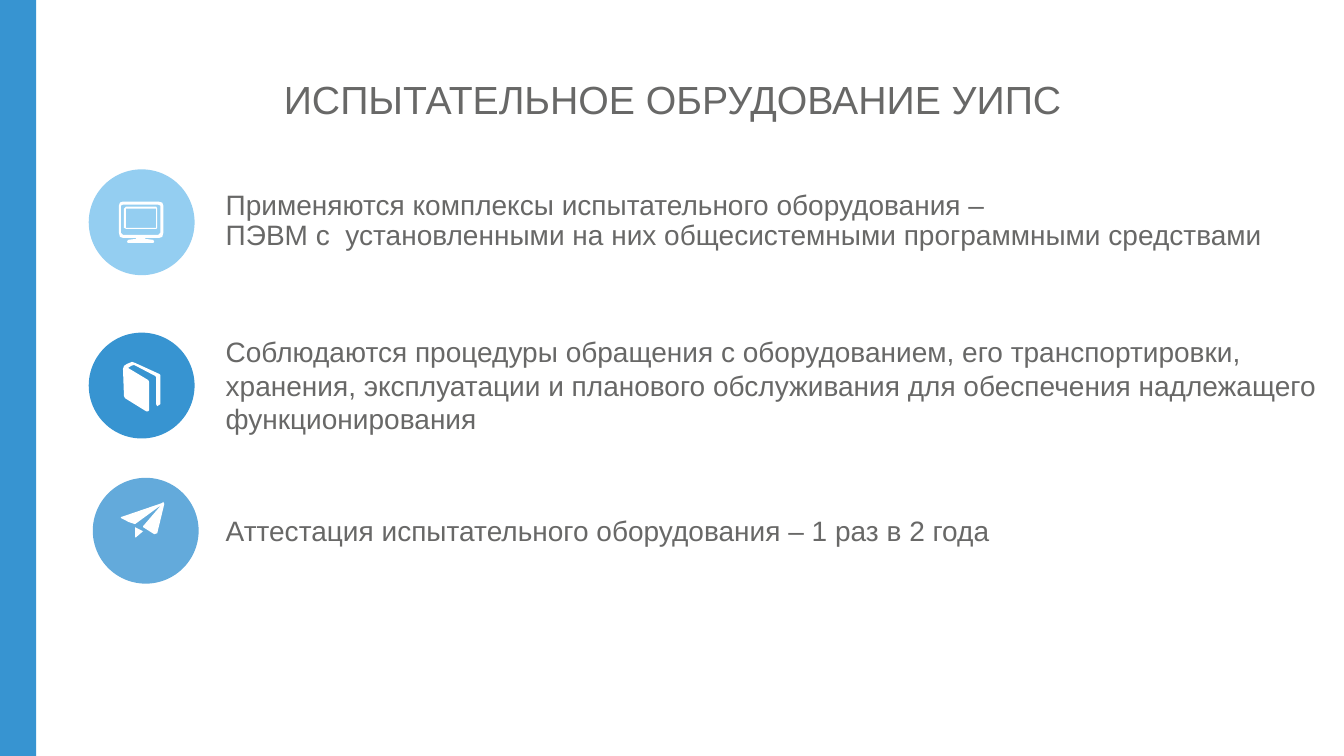
import pptx
import pptx.dml.color
import pptx.enum.shapes
import pptx.enum.text
import pptx.util
from pptx.util import Inches

SHAPES = pptx.enum.shapes.MSO_SHAPE
ALIGN = pptx.enum.text.PP_ALIGN
ANCHOR = pptx.enum.text.MSO_ANCHOR
BLUE, WHITE, GREY = "3794D1", "FFFFFF", "686867"

presentation = pptx.Presentation()
presentation.slide_width = Inches(13.33)
presentation.slide_height = Inches(7.5)
slide = presentation.slides.add_slide(presentation.slide_layouts[6])


def paint(shape, color):
    """Give the shape a plain fill with no outline or shadow."""
    shape.shadow.inherit = False
    shape.fill.solid()
    shape.fill.fore_color.rgb = pptx.dml.color.RGBColor.from_string(color)
    shape.line.fill.background()


def add_text(lines, left, top, width, height, size=20, spacing=None,
             align=ALIGN.LEFT, anchor=ANCHOR.TOP):
    box = slide.shapes.add_textbox(Inches(left), Inches(top), Inches(width), Inches(height))
    frame = box.text_frame
    frame.word_wrap = True
    frame.vertical_anchor = anchor
    frame.text = "\n".join(lines)
    for paragraph in frame.paragraphs:
        paragraph.alignment = align
        paragraph.line_spacing = spacing
        paragraph.font.name = "Arial"
        paragraph.font.size = pptx.util.Pt(size)
        paragraph.font.color.rgb = pptx.dml.color.RGBColor.from_string(GREY)


side_bar = slide.shapes.add_shape(SHAPES.RECTANGLE, 0, 0, Inches(0.36), Inches(7.5))
paint(side_bar, BLUE)

add_text(["ИСПЫТАТЕЛЬНОЕ ОБРУДОВАНИЕ УИПС"], 0.92, 0.58, 11.5, 0.85,
         size=28, spacing=0.9, align=ALIGN.CENTER, anchor=ANCHOR.MIDDLE)
add_text(["Применяются комплексы испытательного оборудования –",
          "ПЭВМ с  установленными на них общесистемными программными средствами"],
         2.14, 1.85, 10.61, 0.77, spacing=0.9)
add_text(["Соблюдаются процедуры обращения с оборудованием, его транспортировки,",
          "хранения, эксплуатации и планового обслуживания для обеспечения "
          "надлежащего функционирования"],
         2.14, 3.27, 11.1, 1.11)
add_text(["Аттестация испытательного оборудования – 1 раз в 2 года"], 2.14, 5.05, 7.96, 0.44)

for left, top, color in [(0.88, 1.68, "94CEF1"), (0.88, 3.3, BLUE), (0.92, 4.74, "63AADB")]:
    circle = slide.shapes.add_shape(
        SHAPES.OVAL, Inches(left), Inches(top), Inches(1.05), Inches(1.05))
    paint(circle, color)

# Each icon part is a list of outlines; an outline inside another cuts a hole.
monitor_frame = [
    [(1.22, 2), (1.57, 2), (1.61, 2.01), (1.62, 2.04), (1.62, 2.31), (1.61, 2.35),
     (1.58, 2.36), (1.44, 2.36), (1.44, 2.37), (1.52, 2.38), (1.53, 2.4), (1.52, 2.41),
     (1.27, 2.41), (1.26, 2.4), (1.27, 2.38), (1.35, 2.37), (1.35, 2.36), (1.22, 2.36),
     (1.19, 2.35), (1.18, 2.31), (1.18, 2.04), (1.19, 2.01)],
    [(1.22, 2.03), (1.2, 2.04), (1.2, 2.31), (1.22, 2.33),
     (1.57, 2.33), (1.59, 2.31), (1.59, 2.04), (1.57, 2.03)],
]
monitor_screen = [
    [(1.25, 2.05), (1.55, 2.05), (1.56, 2.07), (1.56, 2.26), (1.55, 2.27),
     (1.25, 2.27), (1.23, 2.26), (1.23, 2.07)],
    [(1.25, 2.07), (1.25, 2.26), (1.55, 2.26), (1.55, 2.07)],
]
book = [
    [(1.58, 3.71), (1.34, 3.6), (1.31, 3.59), (1.26, 3.61), (1.23, 3.63), (1.22, 3.66),
     (1.23, 3.93), (1.24, 3.95), (1.45, 4.08), (1.47, 4.08), (1.48, 4.07), (1.48, 3.79),
     (1.47, 3.77), (1.27, 3.65), (1.3, 3.63), (1.33, 3.62), (1.54, 3.73), (1.55, 3.74),
     (1.55, 4.01), (1.56, 4.03), (1.59, 4.01), (1.59, 3.72)],
]
paper_plane = [
    [(1.61, 4.99), (1.2, 5.13), (1.2, 5.14), (1.28, 5.18), (1.34, 5.2), (1.6, 5.01),
     (1.42, 5.22), (1.42, 5.23), (1.53, 5.3), (1.56, 5.29), (1.63, 5), (1.62, 4.98)],
    [(1.34, 5.33), (1.35, 5.33), (1.42, 5.27), (1.34, 5.23)],
]

for outlines in [monitor_frame, monitor_screen, book, paper_plane]:
    builder = None
    for outline in outlines:
        start, *rest = [(Inches(x), Inches(y)) for x, y in outline]
        if builder is None:
            builder = slide.shapes.build_freeform(*start)
        else:
            builder.move_to(*start)
        builder.add_line_segments(rest, close=True)
    paint(builder.convert_to_shape(), WHITE)

presentation.save("out.pptx")
